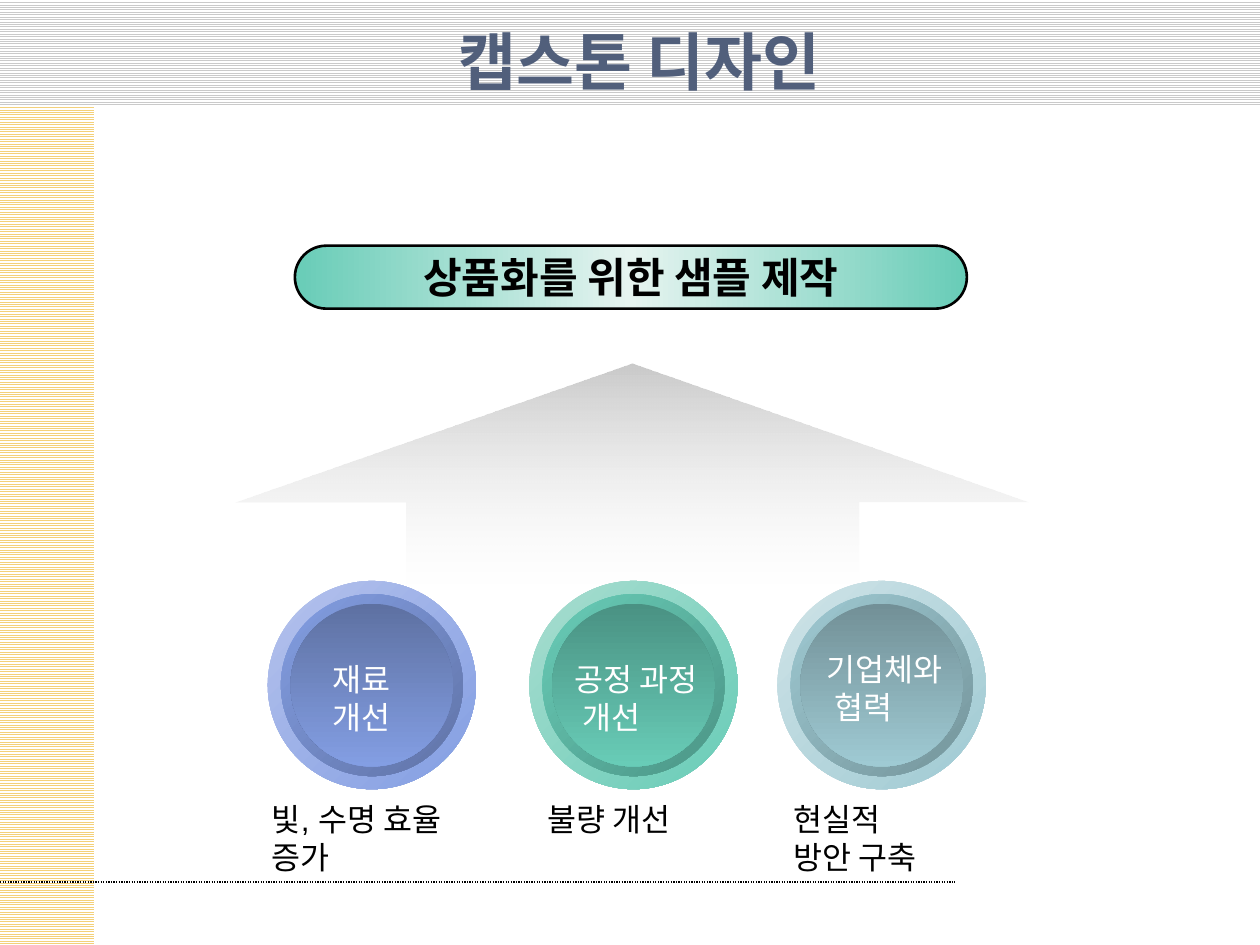
import dataclasses

import pptx
import pptx.dml.color
import pptx.enum.dml
import pptx.enum.shapes
import pptx.enum.text
import pptx.oxml
import pptx.oxml.ns
import pptx.util

Pt = pptx.util.Pt
SHAPE = pptx.enum.shapes.MSO_SHAPE
ALIGN = pptx.enum.text.PP_ALIGN
ANCHOR = pptx.enum.text.MSO_ANCHOR
AUTO = pptx.enum.text.MSO_AUTO_SIZE


@dataclasses.dataclass(frozen=True)
class Theme:
    """Colours, font and type sizes of the deck."""
    font: str = "Arial"
    title: str = "515F7B"
    ink: str = "000000"
    paper: str = "FFFFFF"
    grey: str = "CACACA"
    pale: str = "EFEFEF"
    yellow: str = "F4D17A"
    green: str = "68CCB7"
    mint: str = "E6F4F0"
    blue_rings: tuple = (("B5C2EC", "839EE3"), ("839EE3", "6073A6"), ("5E71A2", "839EE3"))
    green_rings: tuple = (("A9DDD0", "68CCB7"), ("68CCB7", "4C9586"), ("4A9283", "68CCB7"))
    teal_rings: tuple = (("CFE3E7", "9FCAD3"), ("9FCAD3", "74949A"), ("729097", "9FCAD3"))
    title_size: int = 36
    banner_size: int = 24
    text_size: int = 18


T = Theme()


def rgb(value):
    """Return an RGB colour from hex digits."""
    return pptx.dml.color.RGBColor.from_string(value)


def add_shape(shapes, kind, box):
    """Add a preset shape without shadow or line at a box in points."""
    sp = shapes.add_shape(kind, *map(Pt, box))
    sp.shadow.inherit = False
    sp.line.fill.background()
    return sp


def fill_gradient(sp, colors, angle, fade=False):
    """Fill a shape with evenly spaced stops, clockwise angle, optional clear end."""
    sp.fill.gradient()
    grad = sp._element.spPr.find(pptx.oxml.ns.qn("a:gradFill"))
    stops = grad.find(pptx.oxml.ns.qn("a:gsLst"))
    for gs in list(stops):
        stops.remove(gs)
    for i, color in enumerate(colors):
        last = i == len(colors) - 1
        alpha = '<a:alpha val="0"/>' if fade and last else ""
        stops.append(pptx.oxml.parse_xml(
            f'<a:gs {pptx.oxml.ns.nsdecls("a")} pos="{100000 * i // (len(colors) - 1)}">'
            f'<a:srgbClr val="{color}">{alpha}</a:srgbClr></a:gs>'))
    lin = grad.find(pptx.oxml.ns.qn("a:lin"))
    lin.set("ang", str(angle * 60000))
    lin.set("scaled", "0")


def write(tf, lines, size, color, bold=False, align=ALIGN.LEFT, indent=0):
    """Write lines as paragraphs, indenting those after the first."""
    for i, line in enumerate(lines):
        p = tf.paragraphs[0] if i == 0 else tf.add_paragraph()
        p.text = line
        p.alignment = align
        if i and indent:
            p._p.get_or_add_pPr().set("marL", str(Pt(indent)))
        p.font.name, p.font.size, p.font.bold = T.font, Pt(size), bold
        p.font.color.rgb = rgb(color)


def add_text(s, box, lines, color, wrap=True, indent=0):
    """Add a text box at a box in points."""
    tf = s.shapes.add_textbox(*map(Pt, box)).text_frame
    tf.word_wrap = wrap
    tf.auto_size = AUTO.SHAPE_TO_FIT_TEXT
    write(tf, lines, T.text_size, color, indent=indent)


def add_backdrop(s, width, height, band, side):
    """Draw the striped bands and dotted rule and move them to the layout."""
    parts = []
    for box, color in (((0, 0, width, band), T.grey),
                       ((0, band, side, height - band), T.yellow)):
        sp = add_shape(s.shapes, SHAPE.RECTANGLE, box)
        sp.fill.patterned()
        sp.fill.pattern = pptx.enum.dml.MSO_PATTERN.LIGHT_HORIZONTAL
        sp.fill.fore_color.rgb = rgb(color)
        sp.fill.back_color.rgb = rgb(T.paper)
        parts.append(sp)
    rule = s.shapes.add_connector(
        pptx.enum.shapes.MSO_CONNECTOR.STRAIGHT, 0, Pt(504), Pt(546), Pt(504))
    rule.line.color.rgb = rgb(T.ink)
    rule.line.width = Pt(0.75)
    rule.line.dash_style = pptx.enum.dml.MSO_LINE.ROUND_DOT
    rule._element.spPr.append(
        pptx.oxml.parse_xml(f'<a:effectLst {pptx.oxml.ns.nsdecls("a")}/>'))
    for part in parts + [rule]:
        s.slide_layout.shapes._spTree.append(part._element)


def add_title(s, box, text):
    """Place and format the title placeholder."""
    sp = s.shapes.title
    sp.left, sp.top, sp.width, sp.height = map(Pt, box)
    tf = sp.text_frame
    tf.auto_size = AUTO.NONE
    tf.vertical_anchor = ANCHOR.MIDDLE
    write(tf, [text], T.title_size, T.title, True, ALIGN.CENTER)


def add_arrow(s, box):
    """Draw the fading upward arrow."""
    sp = add_shape(s.shapes, SHAPE.UP_ARROW, box)
    sp.adjustments[0], sp.adjustments[1] = 0.57, 0.63
    fill_gradient(sp, (T.grey, T.pale), 90, fade=True)


def add_banner(s, box, text):
    """Draw the rounded goal banner."""
    sp = add_shape(s.shapes, SHAPE.ROUNDED_RECTANGLE, box)
    sp.adjustments[0] = 0.5
    fill_gradient(sp, (T.green, T.mint, T.green), 0)
    sp.line.color.rgb = rgb(T.ink)
    sp.line.width = Pt(1.5)
    tf = sp.text_frame
    tf.word_wrap = False
    tf.vertical_anchor = ANCHOR.MIDDLE
    write(tf, [text], T.banner_size, T.ink, True, ALIGN.CENTER)


def add_button(s, box, rings):
    """Draw one round button as a group of concentric discs."""
    left, top, size = box
    group = s.shapes.add_group_shape()
    for inset, colors, angle in zip((0, 7.5, 13), rings, (45, 45, 90)):
        side = size - 2 * inset
        disc = add_shape(group.shapes, SHAPE.OVAL, (left + inset, top + inset, side, side))
        fill_gradient(disc, colors, angle)


def main():
    """Build and save the slide."""
    prs = pptx.Presentation()
    prs.slide_width, prs.slide_height = Pt(720), Pt(540)
    s = prs.slides.add_slide(prs.slide_layouts[5])
    add_backdrop(s, 720, 540, 60, 54)
    add_title(s, (39.6, 16.6, 651.6, 36), "캡스톤 디자인")
    add_arrow(s, (134.6, 208, 453.6, 125.3))
    add_banner(s, (168.5, 140.4, 384, 36), "상품화를 위한 샘플 제작")
    columns = (
        (153, T.blue_rings, (183, 373.7, 84), ["재료 개선"], True,
         148.3, ["빛, 수명 효율 증가"]),
        (302.5, T.green_rings, (321, 373.7, 92), ["공정 과정", "개선"], False,
         306, ["불량 개선"]),
        (444.3, T.teal_rings, (465, 368, 87), ["기업체와", "협력"], False,
         446.4, ["현실적", "방안 구축"]),
    )
    for left, rings, label_box, label, wrap, note_left, note in columns:
        add_button(s, (left, 332, 119), rings)
        add_text(s, (*label_box, 51), label, T.paper, wrap, indent=5)
        note_height = 29 if note == ["불량 개선"] else 51
        add_text(s, (note_left, 453.6, 124, note_height), note, T.ink)
    prs.save("out.pptx")


if __name__ == "__main__":
    main()
